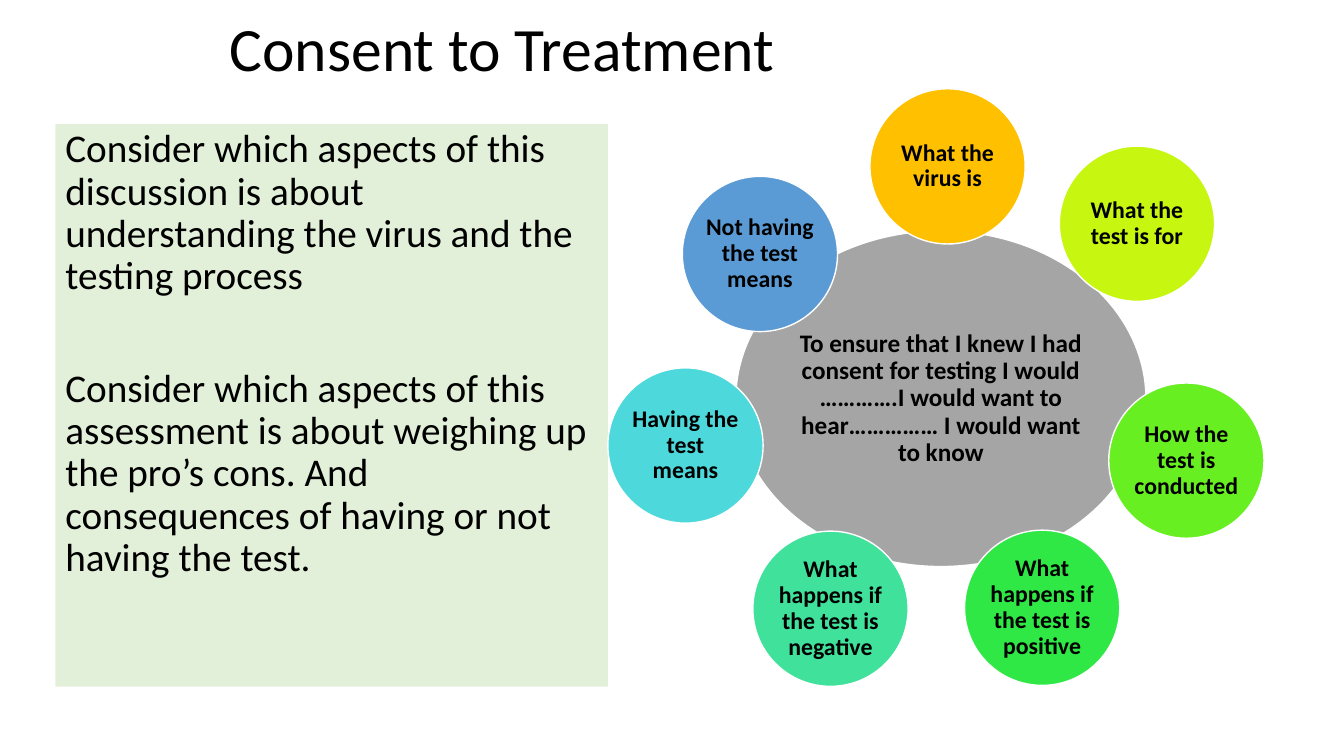
from dataclasses import dataclass

from pptx import Presentation
from pptx.dml.color import RGBColor
from pptx.enum.shapes import MSO_SHAPE as Preset
from pptx.enum.text import MSO_ANCHOR as Anchor, PP_ALIGN as Align
from pptx.util import Pt

COLORS = {
    "black": "000000",
    "white": "FFFFFF",
    "panel": "E2F0D9",
    "hub": "A5A5A5",
    "amber": "FFC000",
    "lime": "C7F711",
    "leaf": "67EF21",
    "green": "30E845",
    "mint": "3FE19B",
    "aqua": "4DD8DB",
    "blue": "5B9BD5",
}
BUBBLE_SIZE = 110.9
PARAGRAPH_GAP = 50


@dataclass(frozen=True)
class Bubble:
    left: float
    top: float
    color: str
    text: str
    width: float = BUBBLE_SIZE
    height: float = BUBBLE_SIZE
    size: float = 17


HUB = Bubble(
    525.6, 164.9, "hub",
    "To ensure that I knew I had consent for testing I would "
    "………….I would want to hear…………… I would want to know",
    width=293, height=239.8, size=18,
)
TOPICS = (
    Bubble(621.4, 63.4, "amber", "What the virus is"),
    Bubble(756.7, 104.4, "lime", "What the test is for"),
    Bubble(792, 273.6, "leaf", "How the test is conducted"),
    Bubble(689, 378.7, "green", "What happens if the test is positive"),
    Bubble(537.8, 379.4, "mint", "What happens if the test is negative"),
    Bubble(434.2, 262.8, "aqua", "Having the test means"),
    Bubble(487.4, 126, "blue", "Not having the test means"),
)
PROMPTS = (
    "Consider which aspects of this discussion is about understanding "
    "the virus and the testing process",
    "Consider which aspects of this assessment is about weighing up the "
    "pro’s cons. And consequences of having or not having the test.",
)


def color(name: str) -> RGBColor:
    return RGBColor.from_string(COLORS[name])


def apply(target, values: dict) -> None:
    for name, value in values.items():
        setattr(target, name, value)


def write(shape, texts: tuple[str, ...], size: float, bold: bool = False,
          align: Align = Align.LEFT, anchor: Anchor = Anchor.TOP,
          inset: float | None = None) -> None:
    frame = shape.text_frame
    apply(frame, {"word_wrap": True, "vertical_anchor": anchor})
    if inset is not None:
        sides = ("left", "top", "right", "bottom")
        apply(frame, {f"margin_{side}": Pt(inset) for side in sides})
    for index, text in enumerate(texts):
        para = frame.add_paragraph() if index else frame.paragraphs[0]
        gap = Pt(PARAGRAPH_GAP if index else 0)
        apply(para, {"alignment": align, "line_spacing": 0.9, "space_before": gap})
        span = para.add_run()
        span.text = text
        apply(span.font, {"name": "Calibri", "size": Pt(size), "bold": bold})
        span.font.color.rgb = color("black")


def add_filled(page, preset: Preset, left: float, top: float,
               width: float, height: float, fill: str):
    shape = page.shapes.add_shape(preset, Pt(left), Pt(top), Pt(width), Pt(height))
    shape.shadow.inherit = False
    shape.fill.solid()
    shape.fill.fore_color.rgb = color(fill)
    return shape


def add_title(page) -> None:
    box = page.shapes.add_textbox(Pt(157), Pt(-8), Pt(648), Pt(90))
    write(box, ("Consent to Treatment",), 44, anchor=Anchor.MIDDLE)


def add_prompts(page) -> None:
    panel = add_filled(page, Preset.RECTANGLE, 39.6, 88.6, 394.6, 401.8, "panel")
    panel.line.fill.background()
    write(panel, PROMPTS, 28)


def add_bubble(page, bubble: Bubble) -> None:
    circle = add_filled(page, Preset.OVAL, bubble.left, bubble.top,
                        bubble.width, bubble.height, bubble.color)
    circle.line.color.rgb = color("white")
    circle.line.width = Pt(1)
    write(circle, (bubble.text,), bubble.size, bold=True, align=Align.CENTER,
          anchor=Anchor.MIDDLE, inset=0.72)


def main() -> None:
    deck = Presentation()
    apply(deck, {"slide_width": Pt(960), "slide_height": Pt(540)})
    page = deck.slides.add_slide(deck.slide_layouts[6])
    add_title(page)
    add_prompts(page)
    for bubble in (HUB, *TOPICS):
        add_bubble(page, bubble)
    deck.save("out.pptx")


if __name__ == "__main__":
    main()
